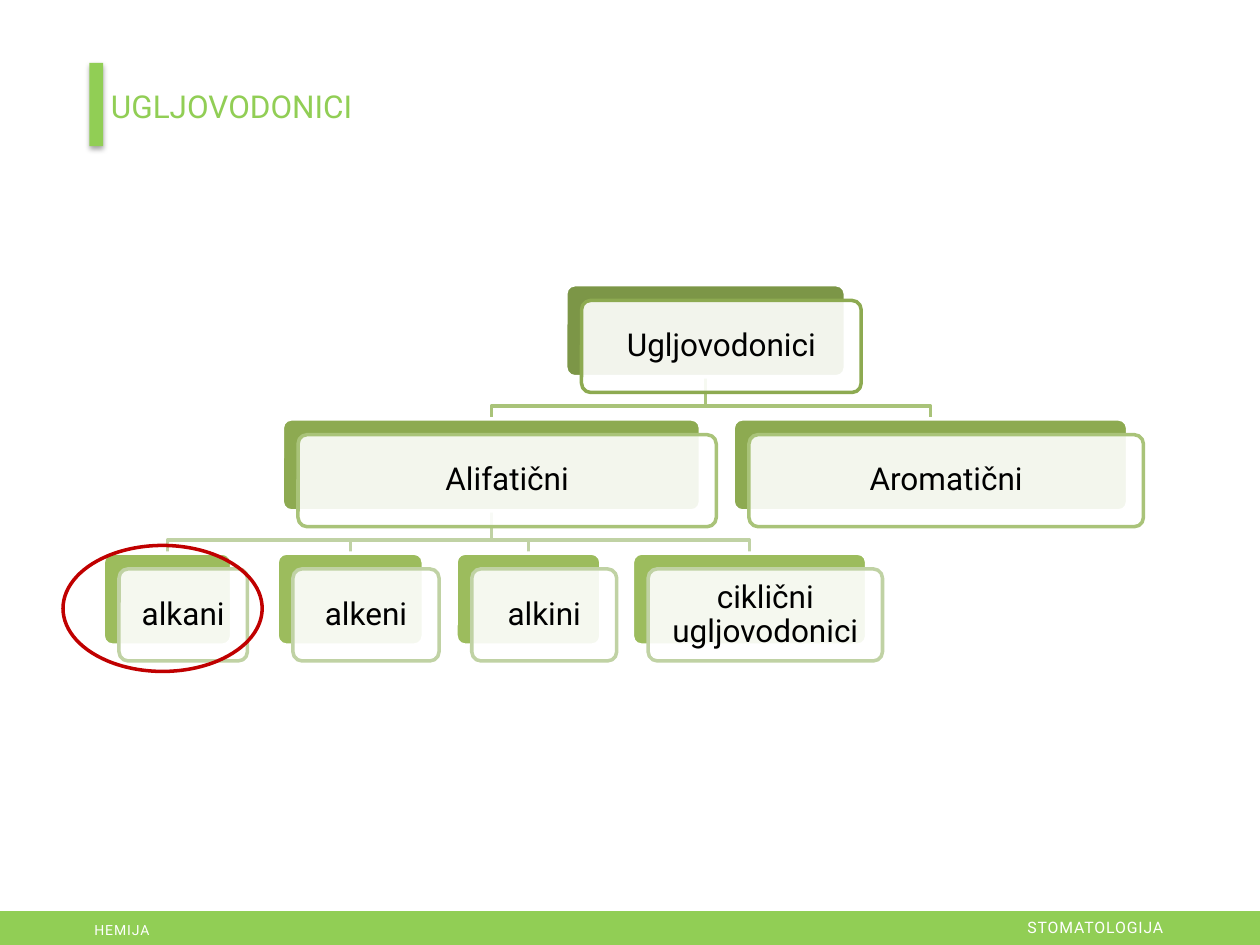
from lxml import etree
from pptx import Presentation
from pptx.dml.color import RGBColor
from pptx.enum import shapes, text
from pptx.oxml.ns import qn
from pptx.util import Pt

FONT = "Roboto"
COLORS = {
    "brand": "91CE55", "white": "FFFFFF", "black": "000000", "ring": "C00000",
    "root": "7C9647", "class": "8DAA51", "family": "9CBC5D",
    "class edge": "A9C379", "family edge": "C0D2A4",
}
LEVELS = [("root", "class"), ("class", "class edge"), ("family", "family edge")]
CARD_HEIGHT, ROW_PITCH, CARD_OFFSET, ELBOW_DROP = 52.6, 76.7, 9, 16.7

# label: (level, left, width, parent)
NODES = {
    "Ugljovodonici": (0, 264.3, 159.8, None),
    "Alifatični": (1, 102.3, 239, "Ugljovodonici"),
    "alkani": (2, 0, 73.4, "Alifatični"),
    "alkeni": (2, 99.4, 83.5, "Alifatični"),
    "alkini": (2, 201.6, 82.8, "Alifatični"),
    "ciklični ugljovodonici": (2, 302.4, 133.9, "Alifatični"),
    "Aromatični": (1, 360, 225.4, "Ugljovodonici"),
}


def color(name):
    return RGBColor.from_string(COLORS[name])


def add_preset(page, kind, box, fill=None, line=None):
    shape = page.shapes.add_shape(kind, *map(Pt, box))
    shape.shadow.inherit = False
    style_outline(shape, fill, line)
    return shape


def style_outline(shape, fill, line):
    if fill:
        shape.fill.solid()
        shape.fill.fore_color.rgb = color(fill)
    else:
        shape.fill.background()
    if line:
        shape.line.color.rgb = color(line)
        shape.line.width = Pt(2)
    else:
        shape.line.fill.background()


def set_alpha(parent, percent):
    etree.SubElement(parent, qn("a:alpha"), val=str(percent * 1000))


def write(shape, wording, size, ink, align, inset=(7.2, 3.6)):
    frame = shape.text_frame
    frame.word_wrap = True
    frame.auto_size = text.MSO_AUTO_SIZE.NONE
    frame.margin_left = frame.margin_right = Pt(inset[0])
    frame.margin_top = frame.margin_bottom = Pt(inset[1])
    para = frame.paragraphs[0]
    para.alignment = align
    para.font.name, para.font.size = FONT, Pt(size)
    para.font.color.rgb = color(ink)
    span = para.add_run()
    span.text = wording
    return para, span


def add_heading(page, box):
    left, top, width, height = box
    title = page.shapes.title
    title.left, title.top = Pt(left + 8.7), Pt(top + 12.2)
    title.width, title.height = Pt(width - 8.7), Pt(25.2)
    write(title, "UGLJOVODONICI", 18, "brand", text.PP_ALIGN.LEFT, (3.6, 2.2))
    marker = add_preset(page, shapes.MSO_SHAPE.RECTANGLE, (left, top, 7.9, height), "brand")
    effects = marker.element.spPr.find(qn("a:effectLst"))
    shadow = etree.SubElement(effects, qn("a:outerShdw"), blurRad=str(Pt(3.1)),
                              dist=str(Pt(1.8)), dir="5400000", rotWithShape="0")
    set_alpha(etree.SubElement(shadow, qn("a:srgbClr"), val=COLORS["black"]), 35)


def add_footer(page, box):
    left, top, width, height = box
    add_preset(page, shapes.MSO_SHAPE.RECTANGLE, box, "brand")
    labels = [
        ("HEMIJA", 8, 46.8, 2.2, 331.2, text.PP_ALIGN.LEFT),
        ("STOMATOLOGIJA", 9, 459.4, 0, 212.4, text.PP_ALIGN.RIGHT),
    ]
    for wording, size, shift, drop, label_width, align in labels:
        label = page.shapes.add_textbox(Pt(left + shift), Pt(top + drop),
                                        Pt(label_width), Pt(17.6))
        _, span = write(label, wording, size, "white", align)
        span.font.element.set("spc", "50") if hasattr(span.font, "element") else \
            span._r.get_or_add_rPr().set("spc", "50")


def add_branch(page, start, end, line):
    (start_x, start_y), (end_x, end_y) = start, end
    elbow_y = start_y + ELBOW_DROP
    builder = page.shapes.build_freeform(Pt(start_x), Pt(start_y))
    corners = [(start_x, elbow_y), (end_x, elbow_y), (end_x, end_y)]
    builder.add_line_segments([(Pt(x), Pt(y)) for x, y in corners], close=False)
    branch = builder.convert_to_shape()
    branch.shadow.inherit = False
    style_outline(branch, None, line)


def add_card(page, box, label, fill, edge):
    left, top, width, height = box
    rounded = shapes.MSO_SHAPE.ROUNDED_RECTANGLE
    back = add_preset(page, rounded, box, fill, "white")
    front_box = (left + CARD_OFFSET, top + CARD_OFFSET, width, height)
    front = add_preset(page, rounded, front_box, "white", edge)
    back.adjustments[0] = front.adjustments[0] = 0.1
    set_alpha(front.element.spPr.find(qn("a:solidFill")).find(qn("a:srgbClr")), 90)
    front.text_frame.vertical_anchor = text.MSO_ANCHOR.MIDDLE
    para, _ = write(front, label, 18, "black", text.PP_ALIGN.CENTER, (5, 5))
    para.line_spacing = 0.9


def add_tree(page, box):
    origin_x, origin_y = box[:2]
    cards = {
        label: (origin_x + left, origin_y + level * ROW_PITCH, width, CARD_HEIGHT)
        for label, (level, left, width, _) in NODES.items()
    }
    for label, (level, _, _, parent) in NODES.items():
        if parent:
            left, top, width, height = cards[parent]
            child_left, child_top, child_width, _ = cards[label]
            add_branch(page, (left + width / 2, top + height),
                       (child_left + child_width / 2, child_top), LEVELS[level][1])
    for label, card in cards.items():
        add_card(page, card, label, *LEVELS[NODES[label][0]])
    ring = (origin_x - 23, origin_y + 149, 113.8, 72)
    add_preset(page, shapes.MSO_SHAPE.OVAL, ring, line="ring")


def main():
    deck = Presentation()
    deck.slide_width, deck.slide_height = Pt(720), Pt(540)
    page = deck.slides.add_slide(deck.slide_layouts[5])
    add_heading(page, (51.1, 36, 609.2, 47.5))
    add_footer(page, (0, 520.6, 720, 19.4))
    add_tree(page, (59, 162.7, 594.4, 215))
    deck.save("out.pptx")


if __name__ == "__main__":
    main()
